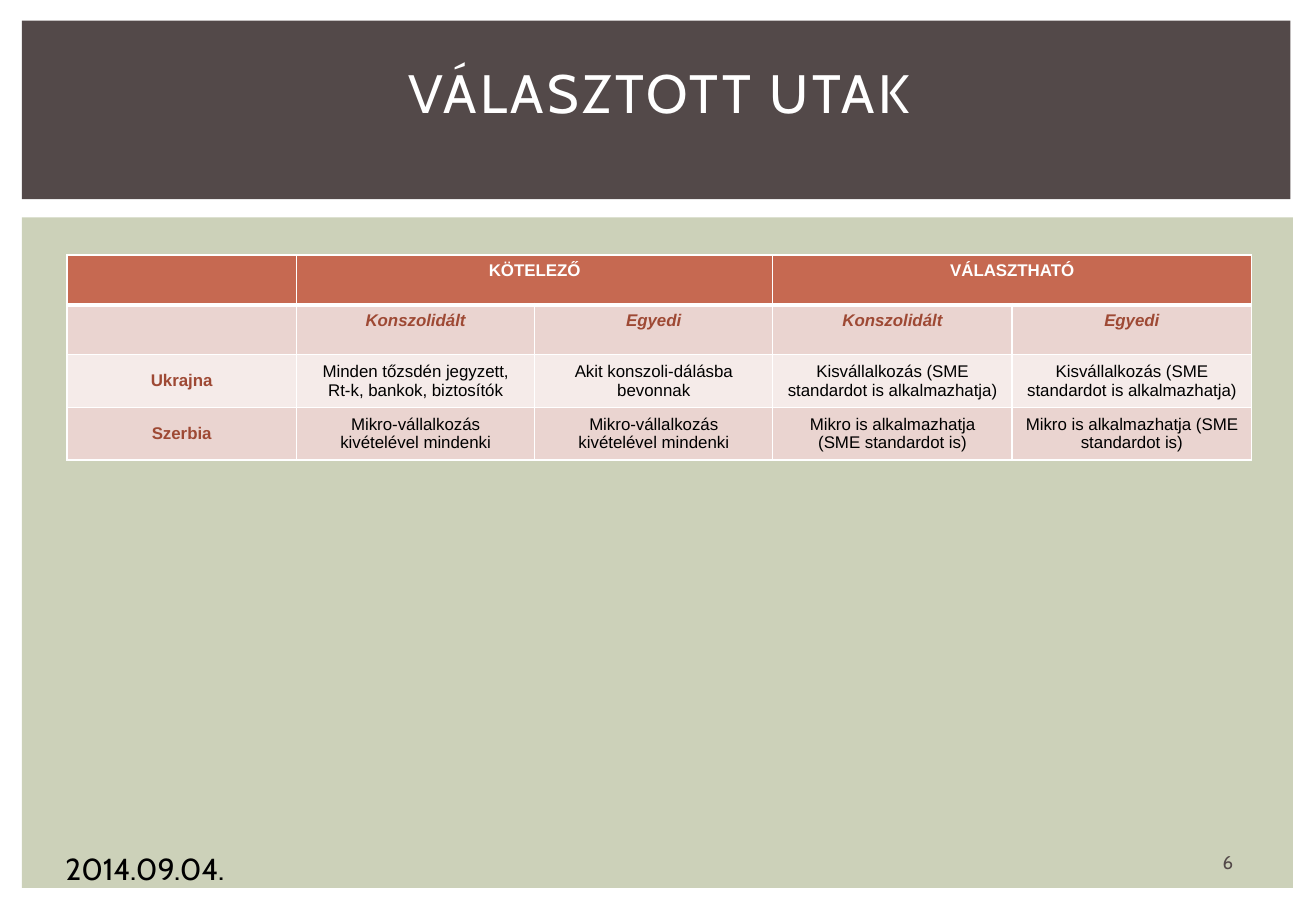
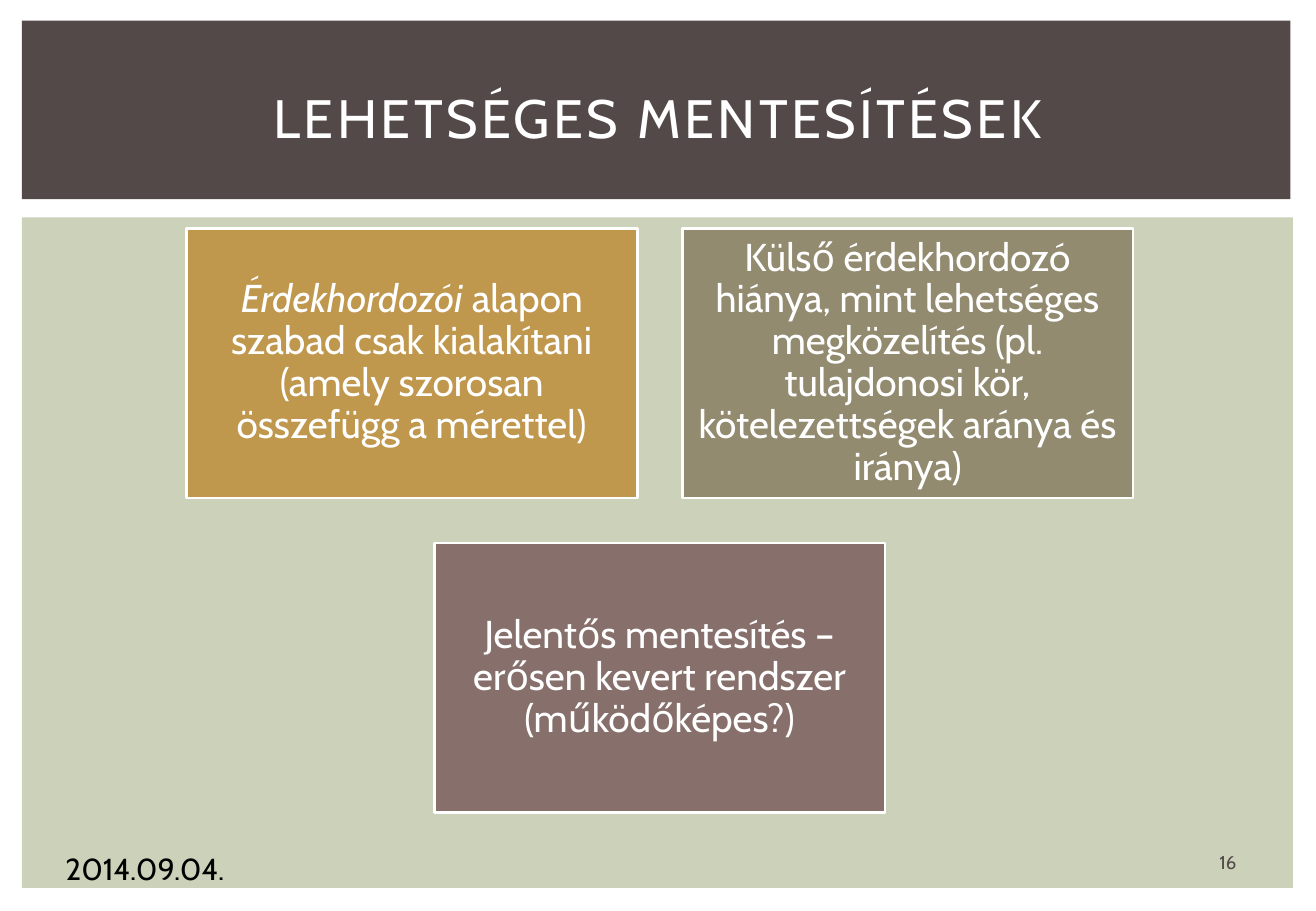
from dataclasses import dataclass

import pptx
import pptx.dml.color
import pptx.enum.shapes
import pptx.enum.text
import pptx.oxml
import pptx.oxml.ns
import pptx.presentation
import pptx.shapes.autoshape
import pptx.slide
import pptx.table
import pptx.text.text
import pptx.util
from pptx.util import Inches

ANCHOR = pptx.enum.text.MSO_ANCHOR
ALIGN = pptx.enum.text.PP_ALIGN


@dataclass(frozen=True)
class Theme:
    font: str = "Cabin"
    table_font: str = "Arial"
    white: str = "FFFFFF"
    black: str = "000000"
    brown: str = "534949"
    sage: str = "CCD1B9"
    gold: str = "BF974D"
    olive: str = "928B70"
    mauve: str = "87706B"
    header: str = "C66951"
    label: str = "9E4934"
    row_dark: str = "EAD4D0"
    row_light: str = "F5EBE9"
    title_size: float = 32
    card_size: float = 23
    date_size: float = 18
    number_size: float = 11
    table_size: float = 10


THEME = Theme()


@dataclass(frozen=True)
class Box:
    left: float
    top: float
    width: float
    height: float

    def lengths(self) -> tuple[pptx.util.Length, ...]:
        return tuple(Inches(value) for value in (self.left, self.top, self.width, self.height))


@dataclass(frozen=True)
class TextStyle:
    size: float
    color: str
    font: str = THEME.font
    bold: bool = False
    italic: bool = False


@dataclass(frozen=True)
class Card:
    fill: str
    text: str
    emphasis: str = ""


@dataclass(frozen=True)
class TableRow:
    fill: str
    texts: tuple[str, ...]
    label_style: TextStyle
    body_style: TextStyle
    anchor: ANCHOR


BANDS = (
    (Box(0.18, 1.79, 10.46, 5.52), THEME.sage),
    (Box(0.18, 0.17, 10.44, 1.47), THEME.brown),
)
DATE = "2014.09.04."
DATE_BOX = Box(0.44, 6.95, 2.53, 0.3)
NUMBER_BOX = Box(9.76, 6.95, 0.69, 0.3)

TITLE_STYLE = TextStyle(THEME.title_size, THEME.white)
CARD_STYLE = TextStyle(THEME.card_size, THEME.white)
CARD_EMPHASIS = TextStyle(THEME.card_size, THEME.white, italic=True)
HEADER_STYLE = TextStyle(THEME.table_size, THEME.white, THEME.table_font, bold=True)
LABEL_STYLE = TextStyle(THEME.table_size, THEME.label, THEME.table_font, bold=True)
SUBHEADER_STYLE = TextStyle(THEME.table_size, THEME.label, THEME.table_font, True, True)
BODY_STYLE = TextStyle(THEME.table_size, THEME.black, THEME.table_font)

COLUMN_WIDTHS = (1.89, 1.96, 1.96, 1.97, 1.97)
ROW_HEIGHT = 0.41
TABLE_ROWS = (
    TableRow(THEME.header, ("", "KÖTELEZŐ", "", "VÁLASZTHATÓ", ""),
             HEADER_STYLE, HEADER_STYLE, ANCHOR.TOP),
    TableRow(THEME.row_dark, ("", "Konszolidált", "Egyedi", "Konszolidált", "Egyedi"),
             SUBHEADER_STYLE, SUBHEADER_STYLE, ANCHOR.TOP),
    TableRow(THEME.row_light, (
        "Ukrajna",
        "Minden tőzsdén jegyzett, Rt-k, bankok, biztosítók",
        "Akit konszoli-dálásba bevonnak",
        "Kisvállalkozás (SME standardot is alkalmazhatja)",
        "Kisvállalkozás (SME standardot is alkalmazhatja)",
    ), LABEL_STYLE, BODY_STYLE, ANCHOR.MIDDLE),
    TableRow(THEME.row_dark, (
        "Szerbia",
        "Mikro-vállalkozás kivételével mindenki",
        "Mikro-vállalkozás kivételével mindenki",
        "Mikro is alkalmazhatja\n(SME standardot is)",
        "Mikro is alkalmazhatja (SME standardot is)",
    ), LABEL_STYLE, BODY_STYLE, ANCHOR.MIDDLE),
)

CARD_ROWS = (
    (
        Card(THEME.gold, "alapon szabad csak kialakítani (amely szorosan összefügg a mérettel)",
             "Érdekhordozói "),
        Card(THEME.olive, "Külső érdekhordozó hiánya, mint lehetséges megközelítés "
                          "(pl. tulajdonosi kör, kötelezettségek aránya és iránya)"),
    ),
    (Card(THEME.mauve, "Jelentős mentesítés – erősen kevert rendszer (működőképes?)"),),
)
CARD_WIDTH, CARD_HEIGHT, CARD_GAP = 3.71, 2.22, 0.37
CARDS_CENTER, CARDS_TOP = 5.43, 1.88


def rgb(color: str) -> pptx.dml.color.RGBColor:
    return pptx.dml.color.RGBColor.from_string(color)


def style_run(run: pptx.text.text._Run, style: TextStyle) -> None:
    run.font.name = style.font
    run.font.size = pptx.util.Pt(style.size)
    run.font.bold = style.bold
    run.font.italic = style.italic
    run.font.color.rgb = rgb(style.color)


def write(frame: pptx.text.text.TextFrame, text: str, style: TextStyle,
          align: ALIGN = ALIGN.CENTER) -> None:
    frame.text = text
    for paragraph in frame.paragraphs:
        paragraph.alignment = align
        for run in paragraph.runs:
            style_run(run, style)


def add_rectangle(slide: pptx.slide.Slide, box: Box, fill: str) -> pptx.shapes.autoshape.Shape:
    shape = slide.shapes.add_shape(pptx.enum.shapes.MSO_SHAPE.RECTANGLE, *box.lengths())
    shape.shadow.inherit = False
    shape.fill.solid()
    shape.fill.fore_color.rgb = rgb(fill)
    shape.line.fill.background()
    return shape


def add_label(slide: pptx.slide.Slide, box: Box, text: str, style: TextStyle,
              align: ALIGN, anchor: ANCHOR) -> None:
    frame = slide.shapes.add_textbox(*box.lengths()).text_frame
    frame.word_wrap = True
    frame.vertical_anchor = anchor
    write(frame, text, style, align)


def add_base_slide(presentation: pptx.presentation.Presentation, title: str,
                   title_box: Box, number: int) -> pptx.slide.Slide:
    """Add a slide with the bands, the title and the footer that all slides share."""
    slide = presentation.slides.add_slide(presentation.slide_layouts.get_by_name("Title Only"))
    for box, fill in BANDS:
        add_rectangle(slide, box, fill)

    title_shape = slide.shapes.title
    slide.shapes.element.append(title_shape.element)  # bring in front of the bands
    title_shape.left, title_shape.top, title_shape.width, title_shape.height = title_box.lengths()
    title_shape.text_frame.vertical_anchor = ANCHOR.MIDDLE
    write(title_shape.text_frame, title, TITLE_STYLE)
    for run in title_shape.text_frame.paragraphs[0].runs:
        run.font._element.set("spc", "200")

    add_label(slide, DATE_BOX, DATE, TextStyle(THEME.date_size, THEME.black),
              ALIGN.LEFT, ANCHOR.TOP)
    add_label(slide, NUMBER_BOX, str(number), TextStyle(THEME.number_size, THEME.brown),
              ALIGN.CENTER, ANCHOR.MIDDLE)
    return slide


def set_borders(cell: pptx.table._Cell, top: float, bottom: float) -> None:
    """Give a cell white borders; the top and bottom widths are in points."""
    properties = cell._tc.get_or_add_tcPr()
    widths = {"lnL": 1, "lnR": 1, "lnT": top, "lnB": bottom}
    for position, (tag, width) in enumerate(widths.items()):
        properties.insert(position, pptx.oxml.parse_xml(
            f'<a:{tag} {pptx.oxml.ns.nsdecls("a")} w="{pptx.util.Pt(width)}">'
            f'<a:solidFill><a:srgbClr val="{THEME.white}"/></a:solidFill></a:{tag}>'
        ))


def add_paths_table(slide: pptx.slide.Slide) -> None:
    box = Box(0.55, 2.1, sum(COLUMN_WIDTHS), ROW_HEIGHT * len(TABLE_ROWS))
    table = slide.shapes.add_table(len(TABLE_ROWS), len(COLUMN_WIDTHS), *box.lengths()).table
    table.first_row = table.horz_banding = False
    for column, width in zip(table.columns, COLUMN_WIDTHS):
        column.width = Inches(width)

    for row_index, row in enumerate(TABLE_ROWS):
        table.rows[row_index].height = Inches(ROW_HEIGHT)
        for column_index, text in enumerate(row.texts):
            cell = table.cell(row_index, column_index)
            cell.fill.solid()
            cell.fill.fore_color.rgb = rgb(row.fill)
            set_borders(cell, top=3 if row_index == 1 else 1, bottom=3 if row_index == 0 else 1)
            cell.margin_left = cell.margin_right = Inches(0.11)
            cell.margin_top = cell.margin_bottom = Inches(0.05)
            cell.vertical_anchor = row.anchor
            if text:
                write(cell.text_frame, text, row.body_style if column_index else row.label_style)

    for first in (1, 3):
        table.cell(0, first).merge(table.cell(0, first + 1))


def add_card(slide: pptx.slide.Slide, box: Box, card: Card) -> None:
    shape = add_rectangle(slide, box, card.fill)
    shape.line.color.rgb = rgb(THEME.white)
    shape.line.width = pptx.util.Pt(1.5)
    frame = shape.text_frame
    frame.word_wrap = True
    frame.vertical_anchor = ANCHOR.MIDDLE
    frame.margin_left = frame.margin_right = Inches(0.1)
    frame.margin_top = frame.margin_bottom = Inches(0.1)
    write(frame, card.emphasis, CARD_EMPHASIS)
    paragraph = frame.paragraphs[0]
    paragraph.line_spacing = 0.9
    run = paragraph.add_run()
    run.text = card.text
    style_run(run, CARD_STYLE)


def add_card_rows(slide: pptx.slide.Slide) -> None:
    """Draw the rows of cards, each row centred on the same axis."""
    for row_index, cards in enumerate(CARD_ROWS):
        row_width = len(cards) * (CARD_WIDTH + CARD_GAP) - CARD_GAP
        top = CARDS_TOP + row_index * (CARD_HEIGHT + CARD_GAP)
        for column_index, card in enumerate(cards):
            left = CARDS_CENTER - row_width / 2 + column_index * (CARD_WIDTH + CARD_GAP)
            add_card(slide, Box(left, top, CARD_WIDTH, CARD_HEIGHT), card)


def main() -> None:
    presentation = pptx.Presentation()
    presentation.slide_width = Inches(10.83)
    presentation.slide_height = Inches(7.5)
    add_paths_table(add_base_slide(
        presentation, "VÁLASZTOTT UTAK", Box(0.55, 0.13, 9.75, 1.25), 6))
    add_card_rows(add_base_slide(
        presentation, "LEHETSÉGES MENTESÍTÉSEK", Box(0.45, 0.39, 9.93, 1.15), 16))
    presentation.save("out.pptx")


if __name__ == "__main__":
    main()
